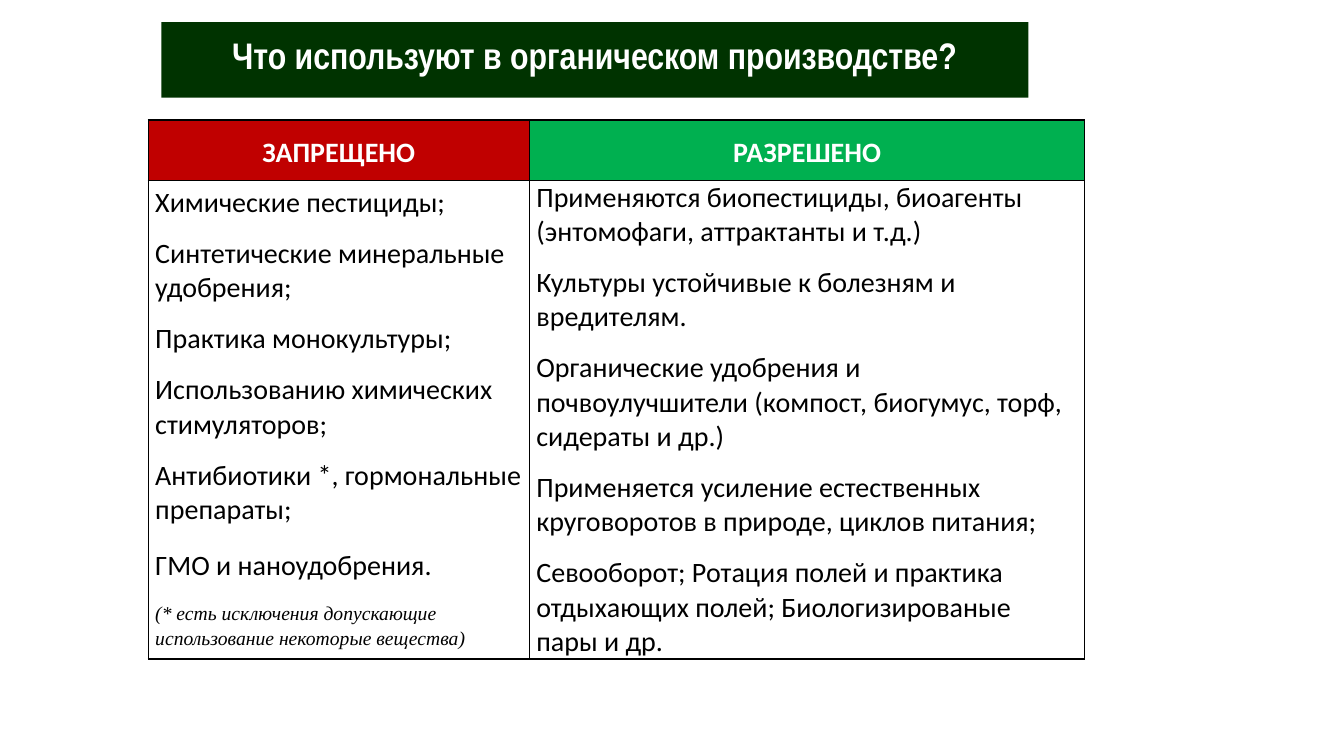
from lxml import etree
from pptx import Presentation
from pptx import util as u
from pptx.dml.color import RGBColor
from pptx.enum import shapes, text
from pptx.oxml.ns import qn

COLORS = {"title": "003300", "banned": "C00000", "allowed": "00B050",
          "white": "FFFFFF", "black": "000000"}
LEADING = 1.15
FOOTNOTE = "(* есть исключения допускающие использование некоторые вещества)"
# Each column: heading, colour key, width, paragraphs as (text, line spacing)
COLUMNS = [
    ("ЗАПРЕЩЕНО", "banned", 3.78, [
        ("Химические пестициды;", LEADING),
        ("Синтетические минеральные удобрения;", 1),
        ("Практика монокультуры;", 1),
        ("Использованию химических стимуляторов;", 1),
        ("Антибиотики *, гормональные препараты;", 1),
        ("ГМО и наноудобрения.", LEADING),
        (FOOTNOTE, LEADING)]),
    ("РАЗРЕШЕНО", "allowed", 5.51, [
        ("Применяются биопестициды, биоагенты (энтомофаги, аттрактанты и т.д.)", 1),
        ("Культуры устойчивые к болезням и вредителям.", 1),
        ("Органические удобрения и почвоулучшители (компост, биогумус, торф, сидераты и др.)", 1),
        ("Применяется усиление естественных круговоротов в природе, циклов питания;", 1),
        ("Севооборот; Ротация полей и практика отдыхающих полей; Биологизированые пары и др.", 1)]),
]
ROWS = [0.6, 4.67]


def rgb(name):
    return RGBColor.from_string(COLORS[name])


def style(p, size, color, face="Calibri", bold=False, italic=False):
    f = p.font
    f.size, f.name, f.bold, f.italic = u.Pt(size), face, bold, italic
    f.color.rgb = rgb(color)


def add_borders(cell):
    """Draw a 1 pt black line on all four sides; call before setting the fill."""
    tcPr = cell._tc.get_or_add_tcPr()
    for side in ("a:lnL", "a:lnR", "a:lnT", "a:lnB"):
        ln = etree.SubElement(tcPr, qn(side), w=str(u.Pt(1)))
        fill = etree.SubElement(ln, qn("a:solidFill"))
        etree.SubElement(fill, qn("a:srgbClr"), val=COLORS["black"])


def fill_cell(cell, color):
    add_borders(cell)
    cell.fill.solid()
    cell.fill.fore_color.rgb = rgb(color)
    cell.margin_left = cell.margin_right = u.Inches(0.07)
    cell.margin_top = cell.margin_bottom = 0


def add_title(s, left, top, width, height):
    sp = s.shapes.add_shape(shapes.MSO_SHAPE.RECTANGLE, *map(u.Inches, (left, top, width, height)))
    sp.shadow.inherit = False
    sp.fill.solid()
    sp.fill.fore_color.rgb = rgb("title")
    sp.line.fill.background()
    tf = sp.text_frame
    tf.word_wrap = True
    tf.vertical_anchor = text.MSO_ANCHOR.MIDDLE
    p = tf.paragraphs[0]
    p.text = "Что используют в органическом производстве?"
    p.alignment = text.PP_ALIGN.CENTER
    p.line_spacing = 0.7
    style(p, 26.4, "white", "Arial Narrow", bold=True)


def add_heading(cell, heading, color):
    fill_cell(cell, color)
    cell.vertical_anchor = text.MSO_ANCHOR.MIDDLE
    p = cell.text_frame.paragraphs[0]
    p.text = heading
    p.alignment = text.PP_ALIGN.CENTER
    p.line_spacing = LEADING
    style(p, 20, "white", bold=True)


def add_list(cell, items):
    fill_cell(cell, "white")
    tf = cell.text_frame
    for i, (line, spacing) in enumerate(items):
        p = tf.add_paragraph() if i else tf.paragraphs[0]
        p.text = line
        p.line_spacing = spacing
        if i:
            p.space_before = u.Pt(12)
        if line == FOOTNOTE:
            style(p, 14, "black", "Times New Roman", italic=True)
        else:
            style(p, 20, "black")


def add_comparison(s, left, top):
    width = sum(column[2] for column in COLUMNS)
    frame = s.shapes.add_table(len(ROWS), len(COLUMNS),
                               *map(u.Inches, (left, top, width, sum(ROWS))))
    table = frame.table
    for row, height in zip(table.rows, ROWS):
        row.height = u.Inches(height)
    for c, (heading, color, col_width, items) in enumerate(COLUMNS):
        table.columns[c].width = u.Inches(col_width)
        add_heading(table.cell(0, c), heading, color)
        add_list(table.cell(1, c), items)


def main():
    prs = Presentation()
    prs.slide_width, prs.slide_height = u.Inches(13.33), u.Inches(7.5)
    s = prs.slides.add_slide(prs.slide_layouts[6])
    add_comparison(s, 1.47, 1.19)
    add_title(s, 1.6, 0.22, 8.6, 0.75)
    prs.save("out.pptx")


if __name__ == "__main__":
    main()
